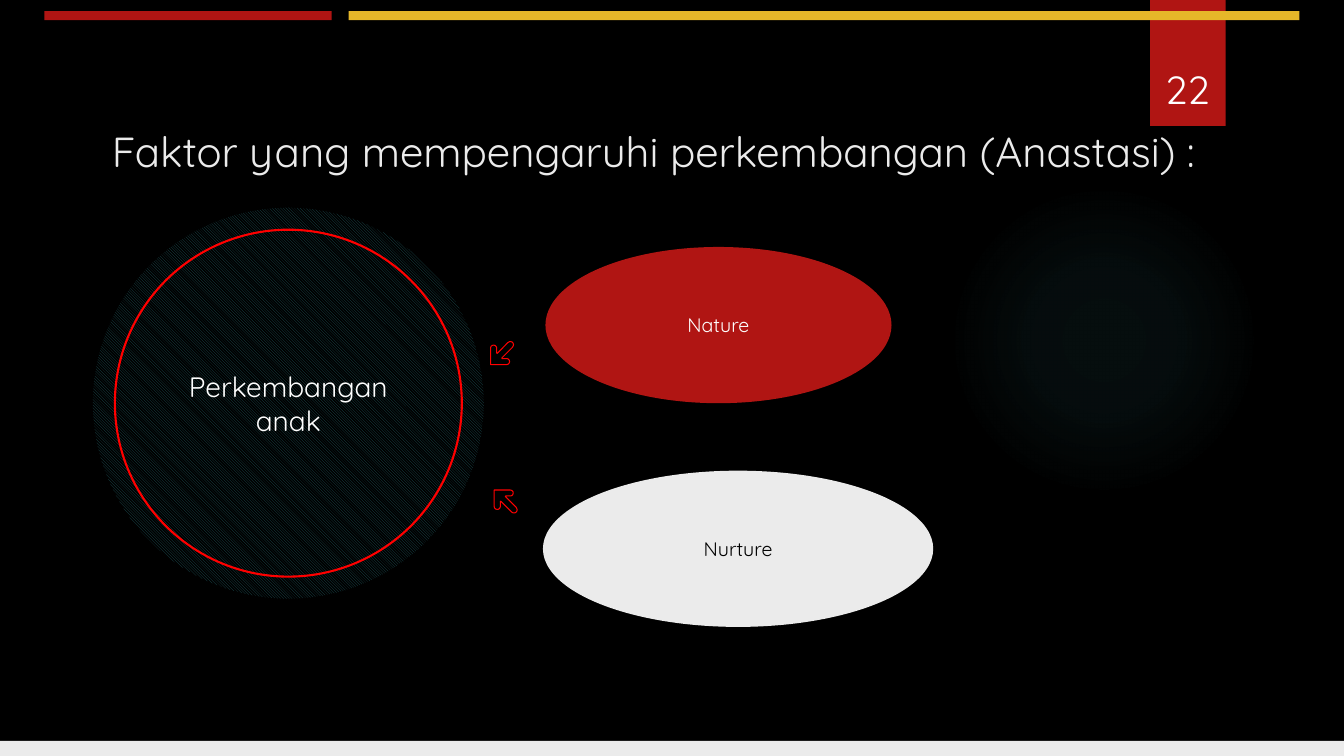
from pptx import Presentation
from pptx.dml.color import RGBColor
from pptx.enum.dml import MSO_PATTERN
from pptx.enum.shapes import MSO_SHAPE as SHAPE
from pptx.enum.text import MSO_ANCHOR as ANCHOR, PP_ALIGN as ALIGN
from pptx.oxml import parse_xml
from pptx.oxml.ns import nsdecls, qn
from pptx.util import Pt

FONT = "Quicksand"
RED, GOLD, PALE = "B01513", "E6B729", "EBEBEB"
BRIGHT_RED, WHITE, BLACK = "FF0000", "FFFFFF", "000000"
TEAL, GLOW = "1E5155", "50B9C1"

# Outline of an arrow to the lower left, in tenths of a point
ARROW_HEIGHT = 173
ARROW = [
    (4, 169), (119, 169), (130, 166), (138, 157), (140, 148), (137, 136),
    (130, 129), (119, 126), (86, 126), (84, 122), (161, 45), (166, 36),
    (168, 27), (165, 16), (158, 8), (148, 5), (138, 6), (128, 12), (52, 89),
    (48, 87), (48, 50), (44, 39), (36, 32), (26, 30), (15, 33), (7, 40),
    (4, 50),
]


def rgb(color):
    return RGBColor.from_string(color)


def write(sp, text, size=14, color=WHITE, anchor=ANCHOR.MIDDLE, inset=None):
    """Put one centred paragraph in a shape."""
    tf = sp.text_frame
    tf.word_wrap = True
    tf.vertical_anchor = anchor
    if inset is not None:
        tf.margin_left = tf.margin_right = Pt(inset)
        tf.margin_top = tf.margin_bottom = Pt(inset)
    p = tf.paragraphs[0]
    p.alignment = ALIGN.CENTER
    r = p.add_run()
    r.text = text
    r.font.name = FONT
    r.font.size = Pt(size)
    r.font.color.rgb = rgb(color)


def paint(sp, fill=None, line=None, weight=0.75):
    sp.shadow.inherit = False
    if fill:
        sp.fill.solid()
        sp.fill.fore_color.rgb = rgb(fill)
    else:
        sp.fill.background()
    if line:
        sp.line.color.rgb = rgb(line)
        sp.line.width = Pt(weight)
    else:
        sp.line.fill.background()


def add_shape(s, kind, left, top, width, height, **style):
    sp = s.shapes.add_shape(kind, Pt(left), Pt(top), Pt(width), Pt(height))
    paint(sp, **style)
    return sp


def add_glow(s, left, top, size):
    """Add a circle whose faint colour fades out from the centre."""
    sp = add_shape(s, SHAPE.OVAL, left, top, size, size)
    stops = "".join(
        f'<a:gs pos="{pos}000"><a:srgbClr val="{GLOW}">'
        f'<a:alpha val="{alpha}000"/></a:srgbClr></a:gs>'
        for pos, alpha in [(0, 7), (36, 6), (69, 0)])
    gradient = parse_xml(
        f'<a:gradFill {nsdecls("a")} rotWithShape="1"><a:gsLst>{stops}</a:gsLst>'
        '<a:path path="circle"><a:fillToRect l="50000" t="50000" r="50000" '
        'b="50000"/></a:path></a:gradFill>')
    sp_pr = sp.element.spPr
    sp_pr.replace(sp_pr.find(qn("a:noFill")), gradient)


def add_hatched_circle(s, left, top, size):
    sp = add_shape(s, SHAPE.OVAL, left, top, size, size)
    sp.fill.patterned()
    sp.fill.pattern = MSO_PATTERN.LIGHT_DOWNWARD_DIAGONAL
    sp.fill.fore_color.rgb = rgb(TEAL)
    sp.fill.back_color.rgb = rgb(BLACK)
    return sp


def add_arrow(s, left, top, upward=False):
    points = [(x, ARROW_HEIGHT - y if upward else y) for x, y in ARROW]
    builder = s.shapes.build_freeform(*points[0], scale=Pt(0.1))
    builder.add_line_segments(points[1:], close=True)
    paint(builder.convert_to_shape(Pt(left), Pt(top)), line=BRIGHT_RED)


def add_frame(s):
    add_glow(s, 677.5, 131.8, 221.8)
    for left, top, width, height, fill in [
        (821.5, 0, 54, 90, RED),
        (31.7, 7.9, 205.2, 6.5, RED),
        (249.1, 7.9, 679, 6.5, GOLD),
        (0, 529.2, 960, 10.8, PALE),
    ]:
        add_shape(s, SHAPE.RECTANGLE, left, top, width, height, fill=fill)
    number = s.shapes.add_textbox(Pt(815), Pt(23), Pt(66.2), Pt(60.5))
    write(number, "22", size=28, anchor=ANCHOR.BOTTOM)


def add_title(s, text):
    title = s.shapes.title
    title.left, title.top = Pt(18.7), Pt(90)
    title.width, title.height = Pt(896.4), Pt(36)
    write(title, text, size=30, color=PALE, inset=0)


def main():
    prs = Presentation()
    prs.slide_width, prs.slide_height = Pt(960), Pt(540)
    s = prs.slides.add_slide(prs.slide_layouts[5])
    s.background.fill.solid()
    s.background.fill.fore_color.rgb = rgb(BLACK)

    add_frame(s)
    add_title(s, "Faktor yang mempengaruhi perkembangan (Anastasi) :")

    child = add_hatched_circle(s, 66.4, 148.4, 279.2)
    write(child, "Perkembangan anak", size=20)
    nature = add_shape(s, SHAPE.OVAL, 389.6, 176.4, 247.2, 111.6, fill=RED)
    write(nature, "Nature")
    nurture = add_shape(s, SHAPE.OVAL, 387.8, 336.2, 278.8, 111.6, fill=PALE)
    write(nurture, "Nurture", color=BLACK)

    add_arrow(s, 350, 243.5)
    add_arrow(s, 352.6, 349.6, upward=True)
    add_shape(s, SHAPE.OVAL, 82.1, 164.1, 247.8, 247.8, line=BRIGHT_RED, weight=1.5)

    prs.save("out.pptx")


if __name__ == "__main__":
    main()
